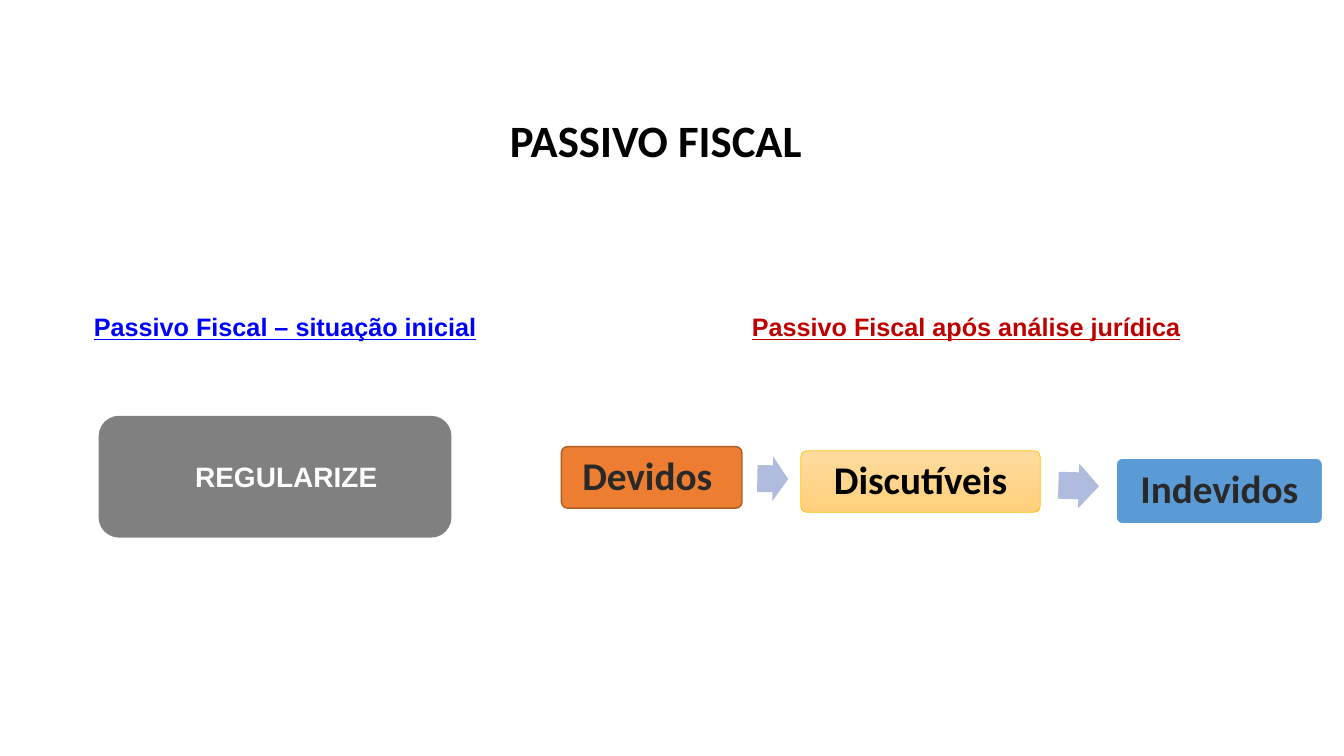
from pptx import Presentation
from pptx.dml.color import RGBColor
from pptx.enum.shapes import MSO_SHAPE as Preset
from pptx.enum.text import MSO_ANCHOR as Anchor, MSO_AUTO_SIZE as AutoSize, PP_ALIGN as Align
from pptx.util import Pt

COLORS = {
    "black": "000000", "white": "FFFFFF", "charcoal": "292929",
    "blue": "0000FF", "red": "C00000", "gray": "808080",
    "orange": "ED7D31", "rust": "AF5C24", "gold": "FFC000",
    "cream": "FFDB9E", "sand": "FFD07C", "sky": "5B9BD5", "lavender": "B0BCDE",
}


def color(name):
    return RGBColor.from_string(COLORS[name])


def write(shape, text, color_name, anchor, align, **font_format):
    frame = shape.text_frame
    frame.text = text
    frame.auto_size = AutoSize.NONE
    frame.vertical_anchor = anchor
    paragraph = frame.paragraphs[0]
    paragraph.alignment = align
    font = paragraph.runs[0].font
    for key, value in font_format.items():
        setattr(font, key, value)
    font.bold = True
    font.color.rgb = color(color_name)
    return frame


presentation = Presentation()
presentation.slide_width, presentation.slide_height = Pt(960), Pt(540)
slide = presentation.slides.add_slide(presentation.slide_layouts[5])

title = slide.shapes.title
title.left, title.top, title.width, title.height = Pt(356), Pt(77), Pt(225), Pt(46)
write(title, "PASSIVO FISCAL", "black", Anchor.TOP, Align.CENTER,
      name="Calibri", size=Pt(32)).word_wrap = False

headings = [
    ("Passivo Fiscal – situação inicial", 60, 290, "blue"),
    ("Passivo Fiscal após análise jurídica", 530, 323, "red"),
]
for text, left, width, text_color in headings:
    heading = slide.shapes.add_textbox(Pt(left), Pt(219), Pt(width), Pt(51))
    write(heading, text, text_color, Anchor.TOP, Align.LEFT,
          name="Arial", size=Pt(18), underline=True).word_wrap = False

regularize = slide.shapes.add_shape(Preset.ROUNDED_RECTANGLE, Pt(70.5), Pt(297), Pt(252), Pt(87))
regularize.shadow.inherit = False
regularize.fill.solid()
regularize.fill.fore_color.rgb = color("gray")
regularize.line.fill.background()
frame = write(regularize, "REGULARIZE", "white", Anchor.MIDDLE, Align.CENTER,
              name="Arial", size=Pt(20))
frame.margin_left, frame.margin_right = Pt(18), Pt(2)

stages = [
    ("Devidos ", 401, 319, 129, 44, ["orange"], "rust", 1, "charcoal"),
    ("Discutíveis", 572, 322, 171, 44, ["cream", "sand"], "gold", 0.5, "black"),
    ("Indevidos", 797, 327, 148, 47.5, ["sky"], "white", 1.5, "charcoal"),
]
for text, left, top, width, height, fills, line_color, line_width, text_color in stages:
    stage = slide.shapes.add_shape(Preset.ROUNDED_RECTANGLE, Pt(left), Pt(top), Pt(width), Pt(height))
    stage.adjustments[0] = 0.1
    stage.shadow.inherit = False
    if len(fills) == 1:
        stage.fill.solid()
        stage.fill.fore_color.rgb = color(fills[0])
    else:
        stage.fill.gradient()
        stage.fill.gradient_angle = 270
        for stop, fill in zip(stage.fill.gradient_stops, fills):
            stop.color.rgb = color(fill)
    stage.line.color.rgb = color(line_color)
    stage.line.width = Pt(line_width)
    frame = write(stage, text, text_color, Anchor.MIDDLE, Align.CENTER,
                  name="Calibri", size=Pt(28))
    frame.paragraphs[0].line_spacing = 0.9

for left, top, width, rotation in [(541, 326, 22, 1), (756, 331, 29, 1.6)]:
    arrow = slide.shapes.add_shape(Preset.RIGHT_ARROW, Pt(left), Pt(top), Pt(width), Pt(32))
    arrow.adjustments[0] = 0.6
    arrow.rotation = rotation
    arrow.shadow.inherit = False
    arrow.fill.solid()
    arrow.fill.fore_color.rgb = color("lavender")
    arrow.line.fill.background()

presentation.save("out.pptx")
